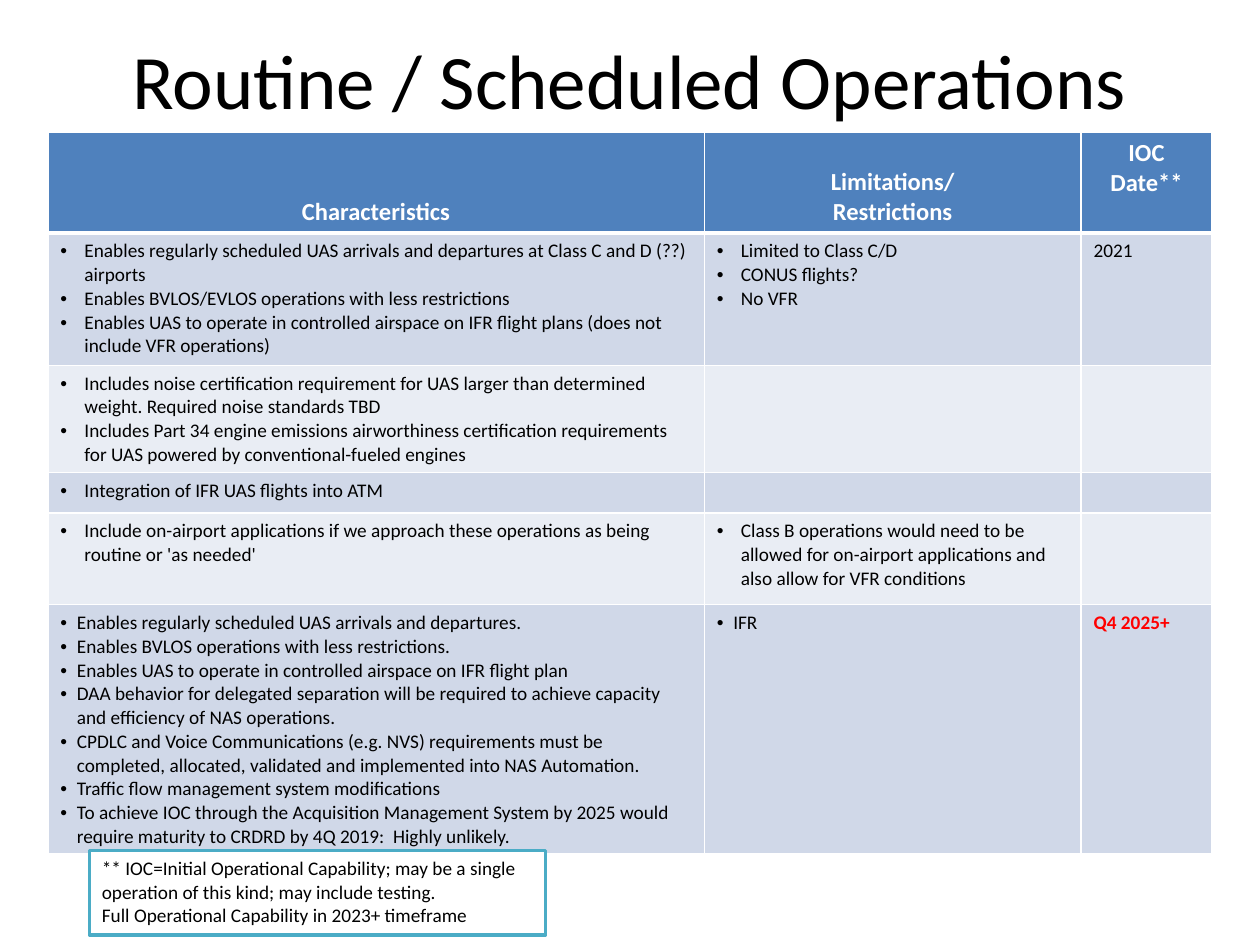
import pptx
import pptx.util
import pptx.dml.color
import pptx.enum.shapes
import pptx.enum.text
import pptx.oxml.ns
import lxml.etree

Inches = pptx.util.Inches
Pt = pptx.util.Pt
ALIGN = pptx.enum.text.PP_ALIGN
ANCHOR = pptx.enum.text.MSO_ANCHOR
FONT = "Calibri"
BLACK, WHITE, RED = "000000", "FFFFFF", "FF0000"
HEADER_FILL, BAND_FILLS = "4F81BD", ("D0D8E8", "E9EDF4")

COLUMN_WIDTHS = (5.21, 2.99, 1.04)
HEADER_HEIGHT = 0.8
HEADERS = (["Characteristics"], ["Limitations/", "Restrictions"], ["IOC Date**"])

# Each row: height, bullet indent, characteristics, limitations, date
ROWS = (
    (1.05, 0.19,
     ["Enables regularly scheduled UAS arrivals and departures at Class C and D (??) airports",
      "Enables BVLOS/EVLOS operations with less restrictions",
      "Enables UAS to operate in controlled airspace on IFR flight plans "
      "(does not include VFR operations)"],
     ["Limited to Class C/D", "CONUS flights?", "No VFR"], ["2021"]),
    (0.85, 0.19,
     ["Includes noise certification requirement for UAS larger than determined weight. "
      "Required noise standards TBD",
      "Includes Part 34 engine emissions airworthiness certification requirements "
      "for UAS powered by conventional-fueled engines"],
     [], []),
    (0.32, 0.19, ["Integration of IFR UAS flights into ATM"], [], []),
    (0.73, 0.19,
     ["Include on-airport applications if we approach these operations as being "
      "routine or 'as needed'"],
     ["Class B operations would need to be allowed for on-airport applications "
      "and also allow for VFR conditions"], []),
    (1.98, 0.13,
     ["Enables regularly scheduled UAS arrivals and departures.",
      "Enables BVLOS operations with less restrictions.",
      "Enables UAS to operate in controlled airspace on IFR flight plan",
      "DAA behavior for delegated separation will be required to achieve capacity "
      "and efficiency of NAS operations.",
      "CPDLC and Voice Communications (e.g. NVS) requirements must be completed, "
      "allocated, validated and implemented into NAS Automation.",
      "Traffic flow management system modifications",
      "To achieve IOC through the Acquisition Management System by 2025 would require "
      "maturity to CRDRD by 4Q 2019:  Highly unlikely."],
     ["IFR"], ["Q4 2025+"]),
)


def color(hex_string):
    return pptx.dml.color.RGBColor.from_string(hex_string)


def add_xml(parent, tag, **attributes):
    return lxml.etree.SubElement(parent, pptx.oxml.ns.qn(tag), attributes)


def write(frame, lines, size, hex_color=BLACK, bold=False, align=ALIGN.LEFT, indent=0):
    """Fill a text frame with one paragraph a line, bulleted if indented."""
    frame.word_wrap = True
    frame.text = "\n".join(lines)
    for para in frame.paragraphs:
        para.alignment = align
        if indent:
            props = para._p.get_or_add_pPr()
            props.set("marL", str(Inches(indent)))
            props.set("indent", str(-Inches(indent)))
            add_xml(props, "a:buFont", typeface="Arial")
            add_xml(props, "a:buChar", char="•")
        for span in para.runs:
            span.font.name = FONT
            span.font.size = Pt(size)
            span.font.bold = bold
            span.font.color.rgb = color(hex_color)
        if not para.runs:  # keeps empty cells from stretching their row
            add_xml(para._p, "a:endParaRPr", sz=str(size * 100))


def style_cell(cell, fill, top=1, bottom=1):
    """Give a cell its fill and white borders."""
    props = cell._tc.get_or_add_tcPr()
    for side, width in (("L", 1), ("R", 1), ("T", top), ("B", bottom)):
        line = add_xml(props, "a:ln" + side, w=str(Pt(width)))
        add_xml(add_xml(line, "a:solidFill"), "a:srgbClr", val=WHITE)
    cell.fill.solid()
    cell.fill.fore_color.rgb = color(fill)


def add_title(page, left, top, width, height):
    box = page.shapes.add_textbox(Inches(left), Inches(top), Inches(width), Inches(height))
    write(box.text_frame, ["Routine / Scheduled Operations"], 44, align=ALIGN.CENTER)
    box.text_frame.vertical_anchor = ANCHOR.MIDDLE


def add_operations_table(page, left, top):
    heights = [HEADER_HEIGHT] + [row[0] for row in ROWS]
    table = page.shapes.add_table(
        len(heights), len(COLUMN_WIDTHS), Inches(left), Inches(top),
        Inches(sum(COLUMN_WIDTHS)), Inches(sum(heights))).table
    for column, width in zip(table.columns, COLUMN_WIDTHS):
        column.width = Inches(width)
    for row, height in zip(table.rows, heights):
        row.height = Inches(height)

    # Header row, with the date heading at the top
    for index, lines in enumerate(HEADERS):
        cell = table.cell(0, index)
        style_cell(cell, HEADER_FILL, bottom=3)
        write(cell.text_frame, lines, 14, WHITE, True, ALIGN.CENTER)
        cell.vertical_anchor = ANCHOR.TOP if index == 2 else ANCHOR.BOTTOM

    # Body rows in alternating bands, bulleted except for the date
    for number, (_, indent, *contents) in enumerate(ROWS, start=1):
        for index, lines in enumerate(contents):
            cell = table.cell(number, index)
            style_cell(cell, BAND_FILLS[(number - 1) % 2], top=3 if number == 1 else 1)
            late = lines == ["Q4 2025+"]
            write(cell.text_frame, lines, 11, RED if late else BLACK, late,
                  indent=indent if lines and index < 2 else 0)


def add_footnote(page, left, top, width, height):
    box = page.shapes.add_shape(pptx.enum.shapes.MSO_SHAPE.RECTANGLE, Inches(left),
                                Inches(top), Inches(width), Inches(height))
    box.shadow.inherit = False
    box.fill.solid()
    box.fill.fore_color.rgb = color(WHITE)
    box.line.color.rgb = color("4BACC6")
    box.line.width = Pt(2)
    write(box.text_frame,
          ["** IOC=Initial Operational Capability; may be a single operation of this kind; "
           "may include testing.",
           "Full Operational Capability in 2023+ timeframe"], 11)
    box.text_frame.vertical_anchor = ANCHOR.TOP


def main():
    deck = pptx.Presentation()
    deck.slide_width, deck.slide_height = Inches(10), Inches(7.5)
    page = deck.slides.add_slide(deck.slide_layouts[6])
    add_title(page, 0.5, 0, 9, 1.25)
    add_operations_table(page, 0.38, 1.05)
    add_footnote(page, 0.71, 6.75, 3.62, 0.67)
    deck.save("out.pptx")


if __name__ == "__main__":
    main()
